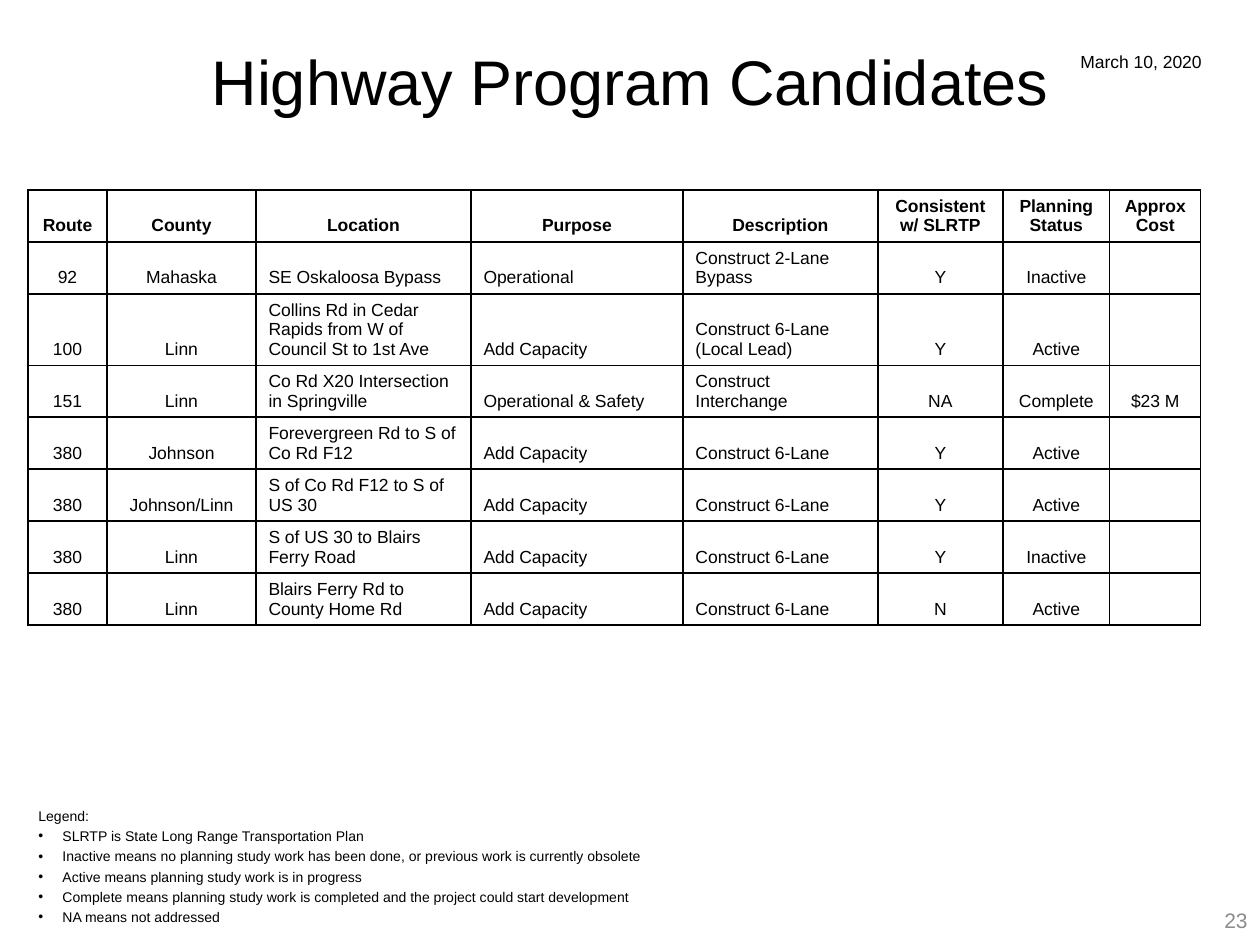
from dataclasses import dataclass

from lxml import etree
from pptx import Presentation
from pptx.dml.color import RGBColor
from pptx.enum.text import MSO_ANCHOR, PP_ALIGN
from pptx.oxml.ns import qn
from pptx.util import Pt

LEFT, CENTER, RIGHT = PP_ALIGN.LEFT, PP_ALIGN.CENTER, PP_ALIGN.RIGHT
TOP, MIDDLE, BOTTOM = MSO_ANCHOR.TOP, MSO_ANCHOR.MIDDLE, MSO_ANCHOR.BOTTOM
TITLE_ONLY = 5
EMU_PER_PX = 914400 // 126


@dataclass(frozen=True)
class Theme:
    font: str = "Arial"
    ink: str = "000000"
    muted: str = "8C8C8C"
    title: int = 36
    number: int = 12
    body: int = 10
    legend: int = 8
    border: int = 1


THEME = Theme()
TITLE = "Highway Program Candidates"
DATE = "March 10, 2020"
PAGE_NUMBER = "23"
COLUMNS = [
    ("Route", 79, CENTER),
    ("County", 149, CENTER),
    ("Location", 215, LEFT),
    ("Purpose", 212, LEFT),
    ("Description", 195, LEFT),
    ("Consistent\nw/ SLRTP", 125, CENTER),
    ("Planning Status", 107, CENTER),
    ("Approx Cost", 91, CENTER),
]
CANDIDATES = [
    ("92", "Mahaska", "SE Oskaloosa Bypass", "Operational",
     "Construct 2-Lane Bypass", "Y", "Inactive", ""),
    ("100", "Linn", "Collins Rd in Cedar Rapids from W of Council St to 1st Ave",
     "Add Capacity", "Construct 6-Lane\n(Local Lead)", "Y", "Active", ""),
    ("151", "Linn", "Co Rd X20 Intersection in Springville", "Operational & Safety",
     "Construct Interchange", "NA", "Complete", "$23 M"),
    ("380", "Johnson", "Forevergreen Rd to S of Co Rd F12", "Add Capacity",
     "Construct 6-Lane", "Y", "Active", ""),
    ("380", "Johnson/Linn", "S of Co Rd F12 to S of US 30", "Add Capacity",
     "Construct 6-Lane", "Y", "Active", ""),
    ("380", "Linn", "S of US 30 to Blairs Ferry Road", "Add Capacity",
     "Construct 6-Lane", "Y", "Inactive", ""),
    ("380", "Linn", "Blairs Ferry Rd to County Home Rd", "Add Capacity",
     "Construct 6-Lane", "N", "Active", ""),
]
LEGEND_HEADING = "Legend:"
LEGEND = [
    "SLRTP is State Long Range Transportation Plan",
    "Inactive means no planning study work has been done, or previous work is currently obsolete",
    "Active means planning study work is in progress",
    "Complete means planning study work is completed and the project could start development",
    "NA means not addressed",
]
TABLE_LEFT, TABLE_TOP = 28, 190
ROW_HEIGHT, TALL_ROW_HEIGHT, TALL_ROW = 52, 71, 2
BULLET_INDENT = 24


def px(length):
    return length * EMU_PER_PX


def write(frame, text, size=THEME.body, color=THEME.ink, bold=False, align=LEFT,
          line_spacing=None, space_before=None):
    frame.text = text
    for paragraph in frame.paragraphs:
        paragraph.alignment = align
        paragraph.line_spacing = line_spacing
        paragraph.space_before = space_before
        font = paragraph.font
        for target in [font] + [run.font for run in paragraph.runs]:
            target.name = THEME.font
            target.size = Pt(size)
            target.bold = bold
            target.color.rgb = RGBColor.from_string(color)


def add_text(slide, text, box, anchor=TOP, wrap=False, **style):
    shape = slide.shapes.add_textbox(*map(px, box))
    frame = shape.text_frame
    frame.word_wrap = wrap
    frame.vertical_anchor = anchor
    write(frame, text, **style)
    return frame


def add_bullet(paragraph):
    properties = paragraph._p.get_or_add_pPr()
    properties.set("marL", str(px(BULLET_INDENT)))
    properties.set("indent", str(-px(BULLET_INDENT)))
    bullet_font = etree.Element(qn("a:buFont"), typeface=THEME.font)
    bullet = etree.Element(qn("a:buChar"), char="•")
    spacing = properties.find(qn("a:spcBef"))
    spacing.addnext(bullet_font)
    bullet_font.addnext(bullet)


def add_borders(cell):
    properties = cell._tc.get_or_add_tcPr()
    for index, side in enumerate(("lnL", "lnR", "lnT", "lnB")):
        line = etree.Element(qn(f"a:{side}"), w=str(Pt(THEME.border)))
        fill = etree.SubElement(line, qn("a:solidFill"))
        etree.SubElement(fill, qn("a:srgbClr"), val=THEME.ink)
        properties.insert(index, line)


def add_candidates(slide):
    rows = [tuple(name for name, _, _ in COLUMNS)] + CANDIDATES
    heights = [TALL_ROW_HEIGHT if index == TALL_ROW else ROW_HEIGHT
               for index in range(len(rows))]
    width = sum(column_width for _, column_width, _ in COLUMNS)
    table = slide.shapes.add_table(
        len(rows), len(COLUMNS), px(TABLE_LEFT), px(TABLE_TOP),
        px(width), px(sum(heights))).table
    table.horz_banding = False
    for column, (_, column_width, _) in zip(table.columns, COLUMNS):
        column.width = px(column_width)
    for row_index, (values, height) in enumerate(zip(rows, heights)):
        table.rows[row_index].height = px(height)
        header = row_index == 0
        for column_index, value in enumerate(values):
            cell = table.cell(row_index, column_index)
            align = CENTER if header else COLUMNS[column_index][2]
            cell.fill.background()
            cell.vertical_anchor = BOTTOM
            write(cell.text_frame, value, bold=header, align=align)
            add_borders(cell)


def main():
    presentation = Presentation()
    presentation.slide_width, presentation.slide_height = px(1260), px(945)
    slide = presentation.slides.add_slide(presentation.slide_layouts[TITLE_ONLY])

    title = slide.shapes.title
    title.left, title.top, title.width, title.height = map(px, (0, 26, 1260, 120))
    title.text_frame.vertical_anchor = MIDDLE
    write(title.text_frame, TITLE, size=THEME.title, align=CENTER, line_spacing=0.85)

    add_candidates(slide)
    add_text(slide, PAGE_NUMBER, (966, 895, 294, 50), anchor=MIDDLE, wrap=True,
             size=THEME.number, color=THEME.muted, align=RIGHT)
    legend = add_text(slide, "\n".join([LEGEND_HEADING] + LEGEND), (26, 801, 635, 131),
                      size=THEME.legend, space_before=Pt(2))
    for paragraph in legend.paragraphs[1:]:
        add_bullet(paragraph)
    add_text(slide, DATE, (1067, 45, 148, 34), align=CENTER)

    presentation.save("out.pptx")


if __name__ == "__main__":
    main()
